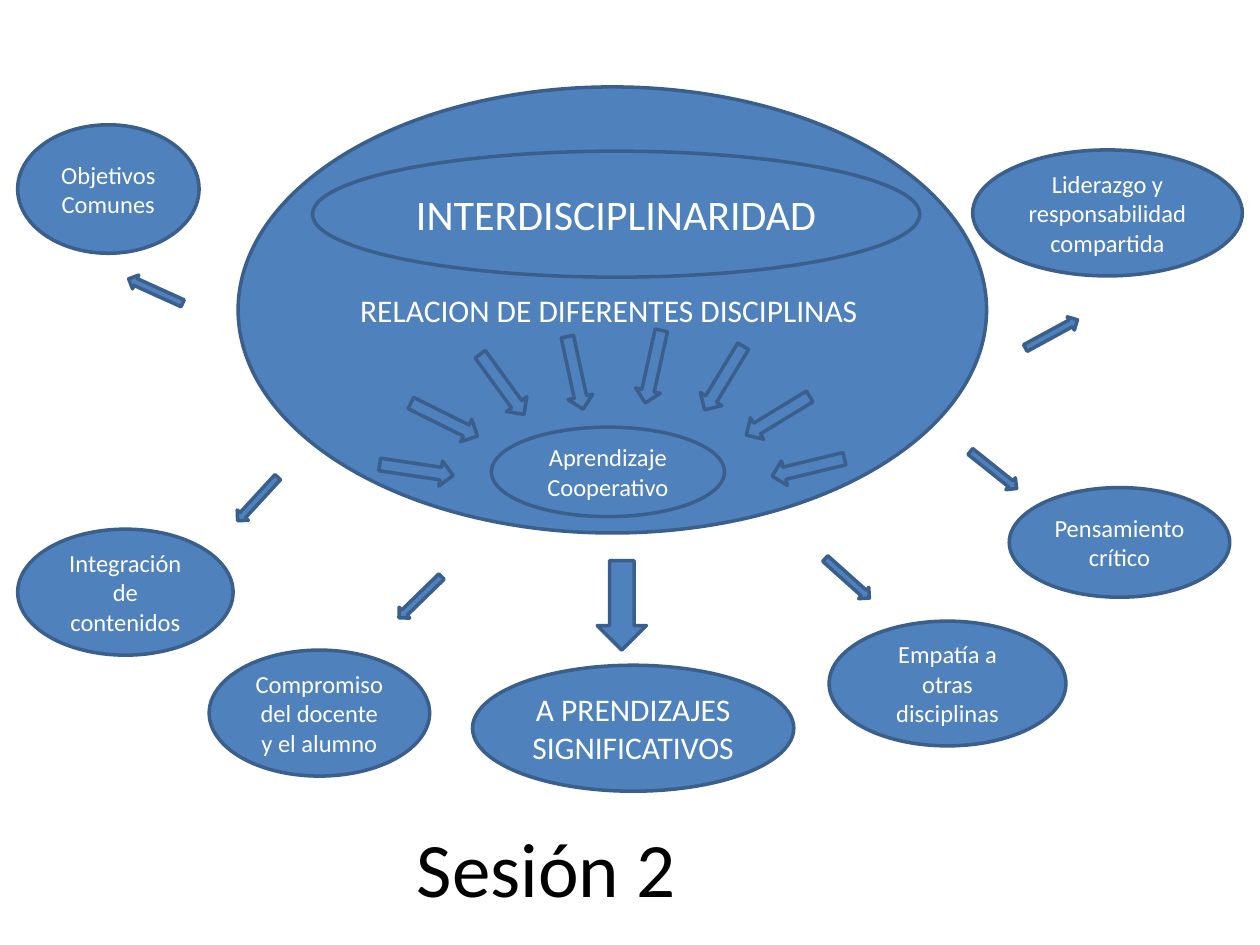
from pptx import Presentation
from pptx.dml.color import RGBColor
from pptx.enum.shapes import MSO_SHAPE as Shape
from pptx.enum.text import MSO_ANCHOR as Anchor, PP_ALIGN as Align
from pptx.util import Inches, Pt

THEME = {
    "font": "Calibri",
    "fill": RGBColor(0x4F, 0x81, 0xBD),
    "outline": RGBColor(0x3A, 0x5F, 0x8C),
    "on_fill": RGBColor(0xFF, 0xFF, 0xFF),
    "title_color": RGBColor(0, 0, 0),
    "outline_width": Pt(2),
    "small": Pt(14), "medium": Pt(18), "large": Pt(24), "title": Pt(44),
}

prs = Presentation()
prs.slide_width, prs.slide_height = Inches(10), Inches(7.5)
COLUMN = prs.slide_width / 100
ROW = prs.slide_height / 75
slide = prs.slides.add_slide(prs.slide_layouts[6])


def add_figure(kind, left, top, width, height, rotation=0):
    """Place a filled, outlined preset shape, measured in grid columns and rows."""
    figure = slide.shapes.add_shape(
        kind, round(left * COLUMN), round(top * ROW),
        round(width * COLUMN), round(height * ROW))
    figure.shadow.inherit = False
    figure.fill.solid()
    figure.fill.fore_color.rgb = THEME["fill"]
    figure.line.color.rgb = THEME["outline"]
    figure.line.width = THEME["outline_width"]
    figure.rotation = rotation
    return figure


def write(holder, lines, size, color, align=Align.CENTER):
    frame = holder.text_frame
    frame.word_wrap = True
    frame.vertical_anchor = Anchor.MIDDLE
    for index, line in enumerate(lines):
        paragraph = frame.add_paragraph() if index else frame.paragraphs[0]
        paragraph.alignment = align
        run = paragraph.add_run()
        run.text = line
        run.font.name = THEME["font"]
        run.font.size = THEME[size]
        run.font.color.rgb = THEME[color]


# Central idea
relation = add_figure(Shape.OVAL, 18.9, 6.9, 59.4, 35.4)
write(relation, ["RELACION DE DIFERENTES DISCIPLINAS"], "medium", "on_fill", Align.LEFT)

# Concepts: left, top, width, height, lines, type size
concepts = [
    (24.8, 12, 48.2, 10, ["INTERDISCIPLINARIDAD"], "large"),
    (39, 33.9, 18.5, 7.1, ["Aprendizaje", "Cooperativo"], "small"),
    (37.5, 52.8, 25.5, 10, ["A PRENDIZAJES SIGNIFICATIVOS"], "medium"),
    (65.8, 49.3, 18.8, 9.9, ["Empatía a otras disciplinas"], "small"),
    (80.1, 38.7, 17.5, 8.7, ["Pensamiento crítico"], "small"),
    (16.6, 51.6, 17.5, 10, ["Compromiso del docente y el alumno"], "small"),
    (1.4, 42, 17.1, 10, ["Integración de contenidos"], "small"),
    (1.4, 9.9, 14.4, 10.2, ["Objetivos Comunes"], "small"),
    (77.2, 11.9, 21.4, 10, ["Liderazgo y responsabilidad compartida"], "small"),
]
for left, top, width, height, lines, size in concepts:
    write(add_figure(Shape.OVAL, left, top, width, height), lines, size, "on_fill")

# Arrows by length and thickness: left, top, rotation
inward_arrows = [
    (30.1, 36.3, 8.5), (32.3, 32.3, 26.4), (36.9, 29.5, 53.9), (42.7, 28.6, 77.8),
    (48.9, 28.1, 102.5), (54.5, 29, 121.2), (58.8, 32, 148.6), (61.2, 36.1, 166.4),
]
outward_arrows = [
    (81.1, 25.9, 331.5), (76.5, 36.7, 38.6), (64.9, 45.3, 41.8),
    (31, 46.8, 135.8), (18.1, 39, 132.6), (10, 22.5, 204.4),
]
for length, thickness, arrows in [(5.9, 2, inward_arrows), (4.7, 1.2, outward_arrows)]:
    for left, top, rotation in arrows:
        add_figure(Shape.RIGHT_ARROW, left, top, length, thickness, rotation)
add_figure(Shape.DOWN_ARROW, 47.4, 44.5, 3.9, 7.1)

# Session title
session = slide.shapes.add_textbox(
    round(0.7 * COLUMN), round(62.7 * ROW), round(86.7 * COLUMN), round(12.2 * ROW))
write(session, ["Sesión 2 "], "title", "title_color")

prs.save("out.pptx")
